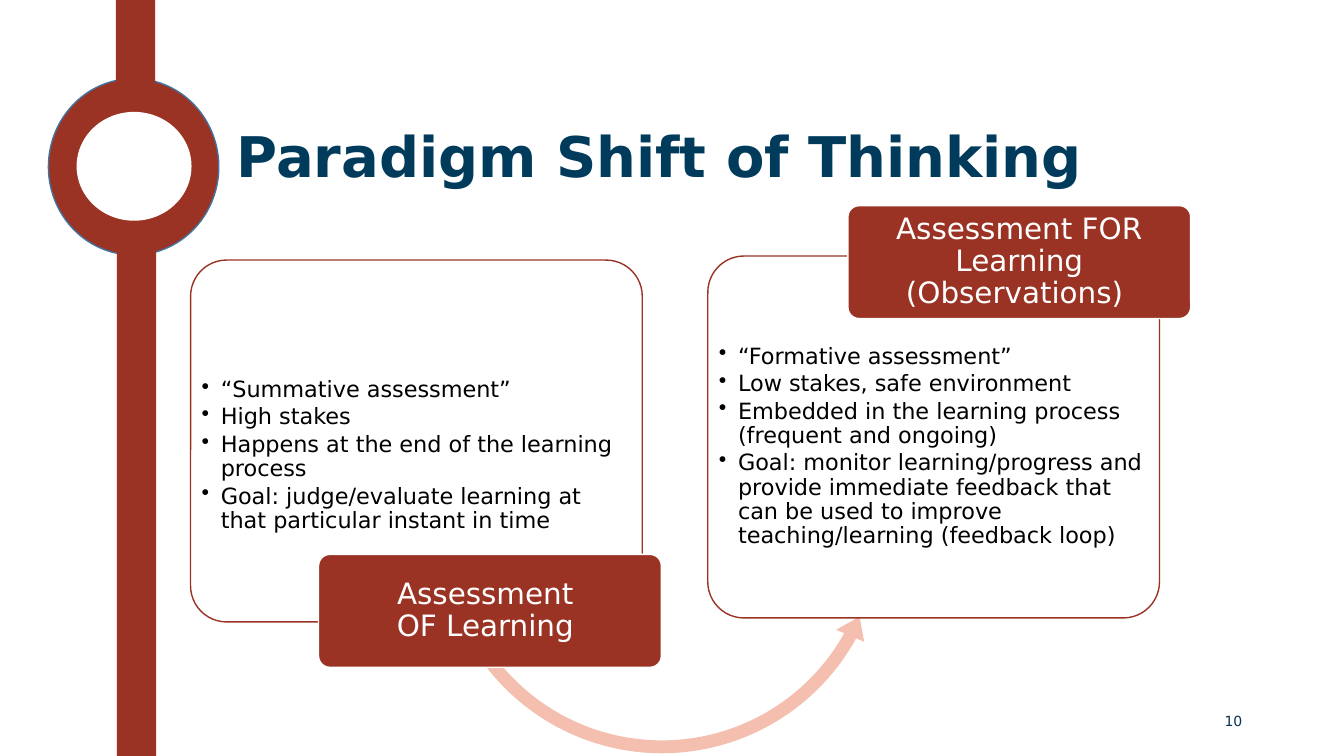
from lxml import etree
from pptx import Presentation
from pptx.dml.color import RGBColor
from pptx.enum.shapes import MSO_SHAPE
from pptx.enum.text import MSO_ANCHOR, PP_ALIGN
from pptx.oxml.ns import qn
from pptx.util import Pt

PX = 9144
FONT = "DejaVu Sans"
RUST = RGBColor(0x9A, 0x33, 0x24)
PEACH = RGBColor(0xF4, 0xBF, 0xAE)
NAVY = RGBColor(0x00, 0x3B, 0x5C)
NUMBER_BLUE = RGBColor(0x09, 0x31, 0x52)
RING_BLUE = RGBColor(0x43, 0x73, 0x9E)
WHITE = RGBColor(0xFF, 0xFF, 0xFF)
BLACK = RGBColor(0x00, 0x00, 0x00)

ELLIPSE = MSO_SHAPE.OVAL
RECTANGLE = MSO_SHAPE.RECTANGLE
ROUNDED = MSO_SHAPE.ROUNDED_RECTANGLE
CURVED_ARROW = MSO_SHAPE.LEFT_CIRCULAR_ARROW
TOP, MIDDLE, BOTTOM = MSO_ANCHOR.TOP, MSO_ANCHOR.MIDDLE, MSO_ANCHOR.BOTTOM
LEFT, CENTER, RIGHT = PP_ALIGN.LEFT, PP_ALIGN.CENTER, PP_ALIGN.RIGHT

SUMMATIVE = [
    "“Summative assessment”",
    "High stakes",
    "Happens at the end of the learning process",
    "Goal: judge/evaluate learning at that particular instant in time",
]
FORMATIVE = [
    "“Formative assessment”",
    "Low stakes, safe environment",
    "Embedded in the learning process (frequent and ongoing)",
    "Goal: monitor learning/progress and provide immediate feedback that "
    "can be used to improve teaching/learning (feedback loop)",
]


def scaled(*lengths):
    """Turn px lengths into EMU."""
    return [length * PX for length in lengths]


def add_figure(page, kind, place, fill, line=None, adjustments=()):
    """Add a filled preset shape, outlined only when a line colour is given."""
    shape = page.shapes.add_shape(kind, *scaled(*place))
    shape.shadow.inherit = False
    for index, value in enumerate(adjustments):
        shape.adjustments[index] = value
    shape.fill.solid()
    shape.fill.fore_color.rgb = fill
    if line is None:
        shape.line.fill.background()
    else:
        shape.line.color.rgb = line
        shape.line.width = Pt(1)
    return shape


def set_frame(frame, anchor, side, edge):
    """Set wrapping, anchor and px margins of a text frame."""
    frame.word_wrap = True
    frame.vertical_anchor = anchor
    frame.margin_left = frame.margin_right = side * PX
    frame.margin_top = frame.margin_bottom = edge * PX


def style_paragraph(para, size, color, align=LEFT, spacing=0.9, bold=False):
    """Format a paragraph and all its runs."""
    para.alignment = align
    para.line_spacing = spacing
    for span in para.runs:
        span.font.name = FONT
        span.font.size = Pt(size)
        span.font.bold = bold
        span.font.color.rgb = color


def add_line_of_text(page, place, text, size, color, **style):
    """Add a text box holding one paragraph centred vertically."""
    box = page.shapes.add_textbox(*scaled(*place))
    set_frame(box.text_frame, MIDDLE, 10, 5)
    box.text_frame.text = text
    style_paragraph(box.text_frame.paragraphs[0], size, color, **style)


def add_bullets(page, place, items, anchor):
    """Add a text box with one bulleted paragraph per item."""
    box = page.shapes.add_textbox(*scaled(*place))
    frame = box.text_frame
    set_frame(frame, anchor, 3, 3)
    frame.text = "\n".join(items)
    for para in frame.paragraphs:
        properties = para._p.get_or_add_pPr()
        properties.set("marL", str(19 * PX))
        properties.set("indent", str(-19 * PX))
        etree.SubElement(properties, qn("a:buChar")).set("char", "•")
        para.space_after = Pt(2.4)
        style_paragraph(para, 16, BLACK)


def add_panel(page, left, top):
    """Add an outlined rounded panel."""
    add_figure(page, ROUNDED, (left, top, 448, 359), WHITE, RUST, [0.1])


def add_label(page, left, top, text):
    """Add a rust heading label with centred text."""
    label = add_figure(page, ROUNDED, (left, top, 340, 112), RUST, WHITE, [0.1])
    set_frame(label.text_frame, MIDDLE, 4, 3)
    label.text_frame.text = text
    style_paragraph(label.text_frame.paragraphs[0], 21, WHITE, CENTER)


def main():
    """Build the slide and save it."""
    deck = Presentation()
    deck.slide_width, deck.slide_height = scaled(1333, 750)
    page = deck.slides.add_slide(deck.slide_layouts[6])

    add_figure(page, ELLIPSE, (48, 78, 169, 175), RUST, RING_BLUE)
    add_figure(page, RECTANGLE, (116, 248, 39, 502), RUST)
    add_figure(page, RECTANGLE, (115, 0, 39, 82), RUST)
    add_figure(page, ELLIPSE, (76, 111, 114, 108), WHITE)
    add_line_of_text(page, (225, 81, 1016, 154), "Paradigm Shift of Thinking",
                     40, NAVY, bold=True)

    add_panel(page, 189, 258)
    add_bullets(page, (197, 266, 431, 266), SUMMATIVE, BOTTOM)
    add_figure(page, CURVED_ARROW, (428, 299, 457, 457), PEACH,
               adjustments=[0.028, 3.411, 17.358, 86.437, 0.033])
    add_label(page, 316, 550, "Assessment \vOF Learning ")

    add_panel(page, 702, 254)
    add_bullets(page, (710, 339, 431, 265), FORMATIVE, TOP)
    add_label(page, 841, 204, "Assessment FOR Learning (Observations) ")

    add_line_of_text(page, (942, 695, 300, 40), "10", 10, NUMBER_BLUE,
                     align=RIGHT, spacing=1.0)
    deck.save("out.pptx")


if __name__ == "__main__":
    main()
